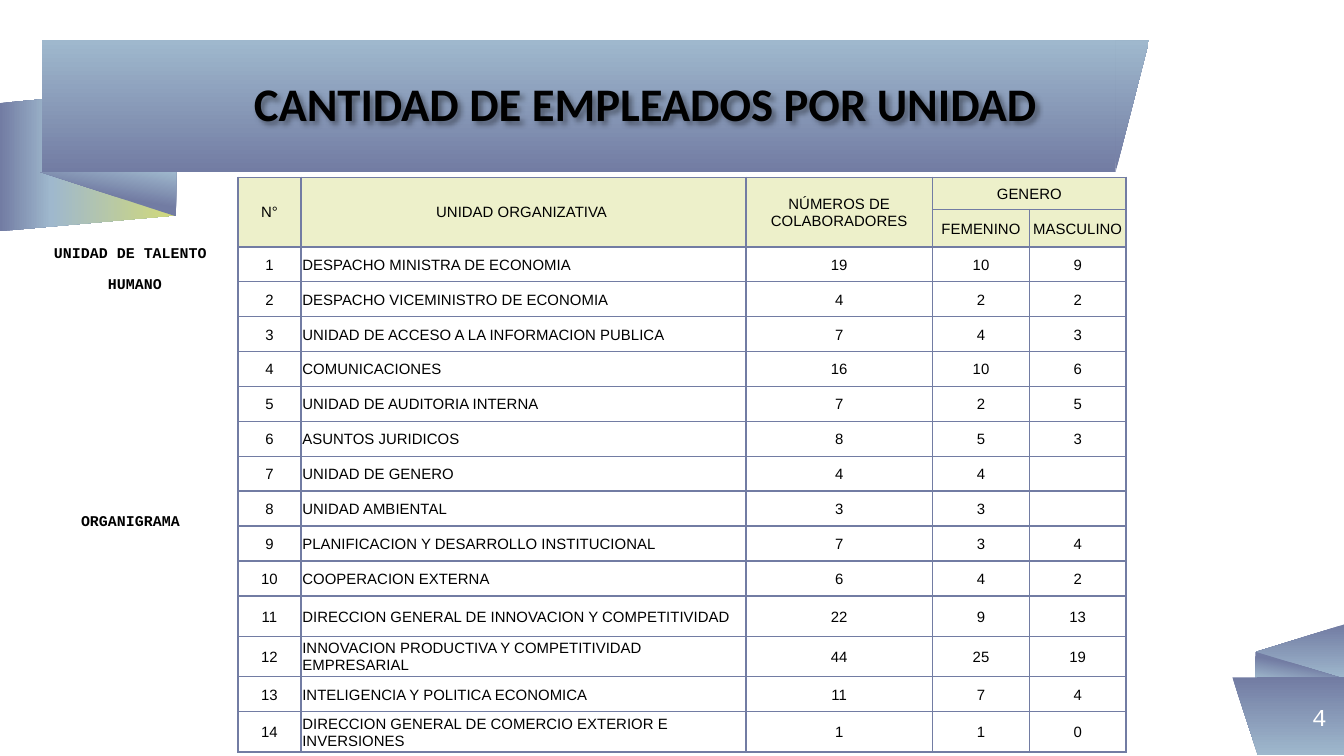
from dataclasses import dataclass
from lxml.etree import SubElement
from pptx import Presentation
from pptx.dml.color import RGBColor
from pptx.enum.shapes import MSO_SHAPE as Kind
from pptx.enum.text import MSO_ANCHOR as Anchor, PP_ALIGN as Align
from pptx.oxml.ns import qn
from pptx.util import Inches, Pt

DARK, PALE, LIME, CREAM = "727CA3", "9FB8CD", "D2DA7A", "EDF0CA"
BLACK, WHITE = "000000", "FFFFFF"
PLAIN = ((0, DARK), (100, PALE))
FOLD = ((0, DARK), (47, DARK), (100, PALE))
TAIL = ((0, DARK), (29, PALE), (100, LIME))


@dataclass
class Piece:
    kind: Kind
    box: tuple
    angle: int
    stops: tuple = PLAIN
    turn: int = 0
    flip: bool = False
    bend: float | None = None


@dataclass
class Unit:
    name: str
    total: int
    women: int
    men: int | str


PIECES = [
    Piece(Kind.PARALLELOGRAM, (0.12, 0.53, 1.07, 1.31), 90, TAIL, 270, True, 0.11),
    Piece(Kind.RIGHT_TRIANGLE, (0.3, 1.28, 1.01, 0.33), 100, FOLD, 180),
    Piece(Kind.RECTANGLE, (0.31, 0.3, 7.99, 0.98), 90, turn=180, flip=True),
    Piece(Kind.ISOSCELES_TRIANGLE, (8.3, 0.3, 0.25, 0.98), 90, turn=180, bend=1),
    Piece(Kind.ISOSCELES_TRIANGLE, (9.47, 4.52, 0.41, 0.66), 180, turn=270, bend=0.5),
    Piece(Kind.RIGHT_TRIANGLE, (9.34, 4.85, 0.66, 0.2), 100, FOLD),
    Piece(Kind.RECTANGLE, (9.35, 5.04, 0.65, 0.58), 270, turn=180),
    Piece(Kind.ISOSCELES_TRIANGLE, (9.17, 5.04, 0.19, 0.58), 270, turn=180, flip=True, bend=1),
]

UNITS = [
    Unit("DESPACHO MINISTRA DE ECONOMIA", 19, 10, 9),
    Unit("DESPACHO VICEMINISTRO DE ECONOMIA", 4, 2, 2),
    Unit("UNIDAD DE ACCESO A LA INFORMACION PUBLICA", 7, 4, 3),
    Unit("COMUNICACIONES", 16, 10, 6),
    Unit("UNIDAD DE AUDITORIA INTERNA", 7, 2, 5),
    Unit("ASUNTOS JURIDICOS", 8, 5, 3),
    Unit("UNIDAD DE GENERO", 4, 4, ""),
    Unit("UNIDAD AMBIENTAL", 3, 3, ""),
    Unit("PLANIFICACION Y DESARROLLO INSTITUCIONAL", 7, 3, 4),
    Unit("COOPERACION EXTERNA", 6, 4, 2),
    Unit("DIRECCION GENERAL DE INNOVACION Y COMPETITIVIDAD", 22, 9, 13),
    Unit("INNOVACION PRODUCTIVA Y COMPETITIVIDAD EMPRESARIAL", 44, 25, 19),
    Unit("INTELIGENCIA Y POLITICA ECONOMICA", 11, 7, 4),
    Unit("DIRECCION GENERAL DE COMERCIO EXTERIOR E INVERSIONES", 1, 1, 0),
]
HEADS = [
    ["N°", "UNIDAD ORGANIZATIVA ", "NÚMEROS DE COLABORADORES", "GENERO", ""],
    ["", "", "", "FEMENINO", "MASCULINO"],
]
WIDTHS = [0.47, 3.31, 1.39, 0.72, 0.72]
HEIGHTS = [0.24, 0.17] + [0.26] * 10 + [0.3, 0.3, 0.26, 0.3]


def tint(code: str) -> RGBColor:
    return RGBColor.from_string(code)


def write(par, text: str, *, size=8, font="Arial", ink=BLACK, bold=False,
          align=Align.CENTER, lines=1.0, above=0, inset=0.0) -> None:
    par.alignment = align
    par.line_spacing = lines
    par.space_before = Pt(above)
    if inset:
        par._p.get_or_add_pPr().set("marL", str(Inches(inset)))
    if not text:
        SubElement(par._p, qn("a:endParaRPr")).set("sz", str(size * 100))
        return
    run = par.add_run()
    run.text = text
    run.font.size = Pt(size)
    run.font.bold = bold
    run.font.color.rgb = tint(ink)
    run.font.name = font


def draw(slide, item: Piece) -> None:
    shape = slide.shapes.add_shape(item.kind, *map(Inches, item.box))
    shape.shadow.inherit = False
    shape.line.fill.background()
    shape.rotation = item.turn
    if item.bend is not None:
        shape.adjustments[0] = item.bend
    frame = shape._element.spPr
    if item.flip:
        frame.find(qn("a:xfrm")).set("flipH", "1")
    shape.fill.gradient()
    blend = frame.find(qn("a:gradFill"))
    stops = blend.find(qn("a:gsLst"))
    for old in list(stops):
        stops.remove(old)
    for spot, code in item.stops:
        stop = SubElement(stops, qn("a:gs"), pos=str(spot * 1000))
        SubElement(stop, qn("a:srgbClr"), val=code)
    blend.find(qn("a:lin")).set("ang", str(item.angle * 60000))


def label(slide, box: tuple, anchor=Anchor.MIDDLE, shade=False):
    shape = slide.shapes.add_textbox(*map(Inches, box))
    if shade:
        list_ = SubElement(shape._element.spPr, qn("a:effectLst"))
        glow = SubElement(list_, qn("a:outerShdw"), blurRad=str(Pt(3)),
                          dist=str(Pt(2)), dir="2700000")
        tone = SubElement(glow, qn("a:srgbClr"), val=BLACK)
        SubElement(tone, qn("a:alpha"), val="40000")
    frame = shape.text_frame
    frame.word_wrap = True
    frame.vertical_anchor = anchor
    frame.margin_left = frame.margin_right = 0
    frame.margin_top = frame.margin_bottom = 0
    return frame


def fill(cell, text: str, align: Align, head: bool) -> None:
    cell.vertical_anchor = Anchor.MIDDLE
    cell.margin_left = cell.margin_right = cell.margin_top = Inches(0.01)
    cell.margin_bottom = 0
    for side in "LRTB":
        edge = SubElement(cell._tc.get_or_add_tcPr(), qn(f"a:ln{side}"), w=str(Pt(1)))
        SubElement(SubElement(edge, qn("a:solidFill")), qn("a:srgbClr"), val=DARK)
    if head:
        cell.fill.solid()
        cell.fill.fore_color.rgb = tint(CREAM)
    else:
        cell.fill.background()
    write(cell.text_frame.paragraphs[0], text, align=align)


def tally(slide) -> None:
    rows = HEADS + [[str(num), u.name, str(u.total), str(u.women), str(u.men)]
                    for num, u in enumerate(UNITS, 1)]
    box = map(Inches, (1.77, 1.32, sum(WIDTHS), sum(HEIGHTS)))
    grid = slide.shapes.add_table(len(rows), len(WIDTHS), *box).table
    grid.first_row = grid.horz_banding = False
    for col, wide in zip(grid.columns, WIDTHS):
        col.width = Inches(wide)
    for row, high in zip(grid.rows, HEIGHTS):
        row.height = Inches(high)
    for y, row in enumerate(rows):
        head = y < len(HEADS)
        for x, text in enumerate(row):
            align = Align.LEFT if x == 1 and not head else Align.CENTER
            fill(grid.cell(y, x), text, align, head)
    for x in range(3):
        grid.cell(0, x).merge(grid.cell(1, x))
    grid.cell(0, 3).merge(grid.cell(0, 4))


def main() -> None:
    deck = Presentation()
    deck.slide_width = Inches(10)
    deck.slide_height = Inches(10) * 9 // 16
    slide = deck.slides.add_slide(deck.slide_layouts[6])
    for item in PIECES:
        draw(slide, item)
    title = label(slide, (1.06, 0.3, 7.48, 0.98), shade=True)
    write(title.paragraphs[0], "CANTIDAD DE EMPLEADOS POR UNIDAD", size=25,
          font="Calibri", bold=True, lines=0.9)
    page = label(slide, (9.34, 5.04, 0.53, 0.58))
    write(page.paragraphs[0], "4", size=13, font="Courier New", ink=WHITE, align=Align.RIGHT)
    side = label(slide, (0, 1.79, 1.93, 1.1), Anchor.TOP)
    notes = (("UNIDAD DE TALENTO ", 6), ("HUMANO", 6), ("ORGANIGRAMA ", 116))
    for num, (text, above) in enumerate(notes):
        par = side.add_paragraph() if num else side.paragraphs[0]
        write(par, text, font="Courier New", bold=True, lines=1.15, above=above, inset=0.08)
    tally(slide)
    deck.save("out.pptx")


if __name__ == "__main__":
    main()
